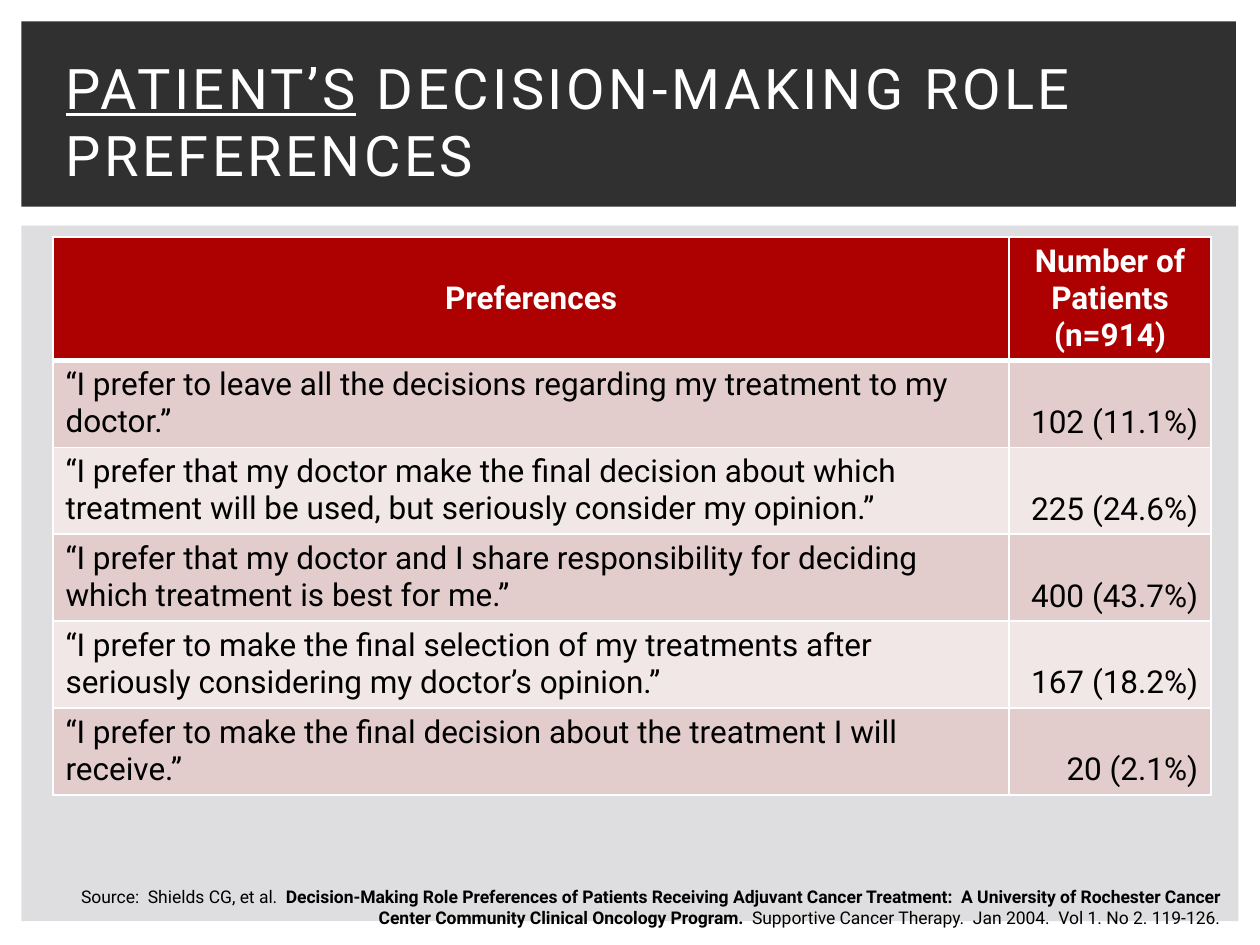
from pptx import Presentation
from pptx import util as u
from pptx.dml.color import RGBColor
from pptx.enum import shapes, text
from pptx.oxml import ns
from lxml import etree

WHITE = RGBColor(0xFF, 0xFF, 0xFF)
BLACK = RGBColor(0, 0, 0)
PANEL = RGBColor(0xDE, 0xDE, 0xE0)
BANNER = RGBColor(0x30, 0x30, 0x30)
RED = RGBColor(0xAD, 0x01, 0x01)
BANDS = [RGBColor(0xE3, 0xCC, 0xCC), RGBColor(0xF1, 0xE7, 0xE7)]

HEADER = ("Preferences", "Number of Patients (n=914)")
ANSWERS = [
    ("“I prefer to leave all the decisions regarding my treatment to my doctor.”", "102 (11.1%)"),
    ("“I prefer that my doctor make the final decision about which treatment will be used, "
     "but seriously consider my opinion.”", "225 (24.6%)"),
    ("“I prefer that my doctor and I share responsibility for deciding which treatment is "
     "best for me.”", "400 (43.7%)"),
    ("“I prefer to make the final selection of my treatments after seriously considering "
     "my doctor’s opinion.”", "167 (18.2%)"),
    ("“I prefer to make the final decision about the treatment I will receive.”", "20 (2.1%)"),
]
SOURCE = [
    ("Source:  Shields CG, et al.  ", False),
    ("Decision-Making Role Preferences of Patients Receiving Adjuvant Cancer Treatment:  "
     "A University of Rochester Cancer Center Community Clinical Oncology Program.", True),
    ("  Supportive Cancer Therapy.  Jan 2004.  Vol 1. No 2. 119-126.", False),
]


class Deck:
    font = "Roboto"

    def __init__(self, width, height):
        self.prs = Presentation()
        self.prs.slide_width = u.Inches(width)
        self.prs.slide_height = u.Inches(height)
        self.s = self.prs.slides.add_slide(self.prs.slide_layouts[5])

    def style(self, r, size, color, bold=False):
        r.font.name = self.font
        r.font.size = u.Pt(size)
        r.font.color.rgb = color
        r.font.bold = bold

    def rect(self, box, color):
        sp = self.s.shapes.add_shape(shapes.MSO_SHAPE.RECTANGLE, *map(u.Inches, box))
        sp.shadow.inherit = False
        sp.fill.solid()
        sp.fill.fore_color.rgb = color
        sp.line.fill.background()

    def title(self, box, parts):
        sp = self.s.shapes.title
        sp.left, sp.top, sp.width, sp.height = map(u.Inches, box)
        self.s.shapes._spTree.append(sp._element)
        tf = sp.text_frame
        tf.auto_size = text.MSO_AUTO_SIZE.NONE
        tf.vertical_anchor = text.MSO_ANCHOR.BOTTOM
        p = tf.paragraphs[0]
        p.alignment = text.PP_ALIGN.LEFT
        for words, underline in parts:
            r = p.add_run()
            r.text = words
            self.style(r, 32, WHITE)
            r.font.underline = underline
            r._r.get_or_add_rPr().set("spc", "200")

    def textbox(self, box, parts):
        tf = self.s.shapes.add_textbox(*map(u.Inches, box)).text_frame
        tf.word_wrap = True
        p = tf.paragraphs[0]
        p.alignment = text.PP_ALIGN.RIGHT
        for words, bold in parts:
            r = p.add_run()
            r.text = words
            self.style(r, 10, BLACK, bold)

    def borders(self, cell, **widths):
        tcPr = cell._tc.get_or_add_tcPr()
        for side in "LRTB":
            ln = etree.SubElement(tcPr, ns.qn("a:ln" + side), w=str(u.Pt(widths.get(side, 1))))
            fill = etree.SubElement(ln, ns.qn("a:solidFill"))
            etree.SubElement(fill, ns.qn("a:srgbClr"), val=str(WHITE))

    def cell(self, cell, words, fill, color, bold, align, anchor):
        cell.fill.solid()
        cell.fill.fore_color.rgb = fill
        cell.vertical_anchor = anchor
        cell.text_frame.text = words
        p = cell.text_frame.paragraphs[0]
        p.alignment = align
        self.style(p.runs[0], 18, color, bold)

    def table(self, box, col_widths, row_heights, rows):
        frame = self.s.shapes.add_table(len(rows), len(col_widths), *map(u.Inches, box))
        table = frame.table
        for col, width in zip(table.columns, col_widths):
            col.width = u.Inches(width)
        for row, height in zip(table.rows, row_heights):
            row.height = u.Inches(height)
        aligns = [text.PP_ALIGN.LEFT, text.PP_ALIGN.RIGHT]
        anchors = [text.MSO_ANCHOR.TOP, text.MSO_ANCHOR.BOTTOM]
        for i, row in enumerate(rows):
            for j, words in enumerate(row):
                cell = table.cell(i, j)
                if i == 0:
                    self.borders(cell, B=3)
                    self.cell(cell, words, RED, WHITE, True,
                              text.PP_ALIGN.CENTER, text.MSO_ANCHOR.MIDDLE)
                else:
                    self.borders(cell, T=3 if i == 1 else 1)
                    self.cell(cell, words, BANDS[(i - 1) % 2], BLACK, False, aligns[j], anchors[j])


def main():
    deck = Deck(10, 7.5)
    deck.rect((0.17, 1.79, 9.66, 5.52), PANEL)
    deck.rect((0.17, 0.17, 9.64, 1.47), BANNER)
    deck.table((0.42, 1.88, 9.19, 4.42), [7.59, 1.6], [0.97] + [0.69] * len(ANSWERS),
               [HEADER] + ANSWERS)
    deck.title((0.42, 0.24, 9.17, 1.3),
               [("PATIENT’S", True), (" DECISION-MAKING ROLE PREFERENCES", False)])
    deck.textbox((0.17, 6.98, 9.61, 0.44), SOURCE)
    deck.prs.save("out.pptx")


if __name__ == "__main__":
    main()
